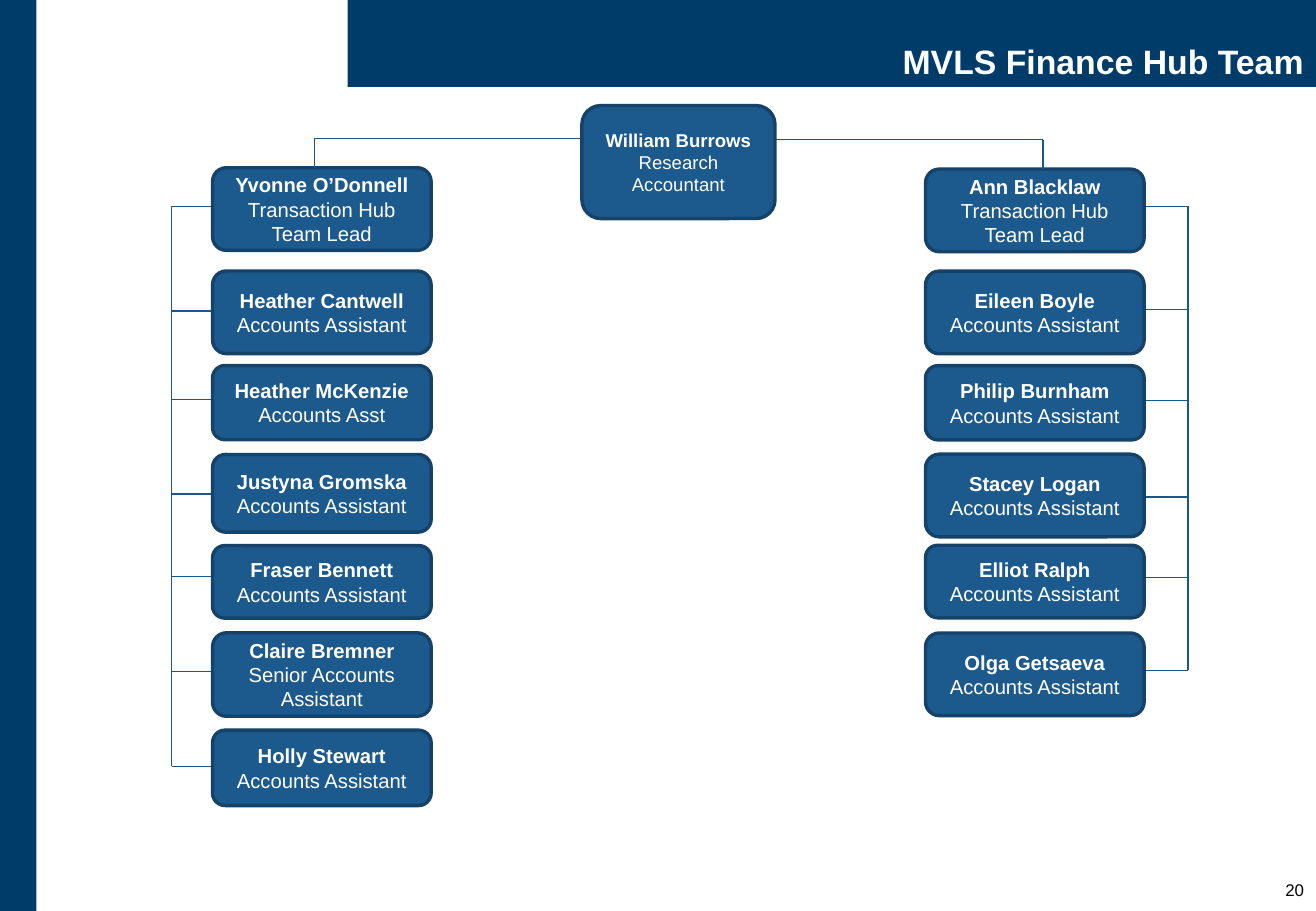
import pptx
import pptx.util
import pptx.dml.color
import pptx.enum.shapes
import pptx.enum.text
import pptx.oxml.ns
import lxml.etree

Pt = pptx.util.Pt
RGBColor = pptx.dml.color.RGBColor
MSO_SHAPE = pptx.enum.shapes.MSO_SHAPE
MSO_ANCHOR = pptx.enum.text.MSO_ANCHOR
PP_ALIGN = pptx.enum.text.PP_ALIGN

NAVY = RGBColor(0x00, 0x3C, 0x69)
BOX_FILL = RGBColor(0x1C, 0x59, 0x8C)
BOX_EDGE = RGBColor(0x15, 0x42, 0x68)
LINK = RGBColor(0x19, 0x57, 0x8C)
WHITE = RGBColor(0xFF, 0xFF, 0xFF)
BLACK = RGBColor(0x00, 0x00, 0x00)

SLIDE_WIDTH, SLIDE_HEIGHT = 780, 540
FONT = "Arial"
LEAD = "Transaction Hub Team Lead"
ASSISTANT = "Accounts Assistant"

# Name, role, top and height of the box, height of its branch line;
# vertical places are counted from the top of the team
LEFT_TEAM = [
    ("Yvonne O’Donnell", LEAD, 0, 49, 23),
    ("Heather Cantwell", ASSISTANT, 61.2, 49, 85),
    ("Heather McKenzie", "Accounts Asst", 117.3, 44, 137.3),
    ("Justyna Gromska", ASSISTANT, 170, 46, 193.4),
    ("Fraser Bennett", ASSISTANT, 224, 43, 242.4),
    ("Claire Bremner", "Senior Accounts Assistant", 275.7, 49.5, 298.7),
    ("Holly Stewart", ASSISTANT, 333.4, 44.7, 354.9),
]
RIGHT_TEAM = [
    ("Ann Blacklaw", LEAD, 0, 49, 22.1),
    ("Eileen Boyle", ASSISTANT, 60.5, 49, 83.3),
    ("Philip Burnham", ASSISTANT, 116.6, 44, 137.2),
    ("Stacey Logan", ASSISTANT, 169, 49, 194.4),
    ("Elliot Ralph", ASSISTANT, 223, 43, 242),
    ("Olga Getsaeva", ASSISTANT, 275, 49, 297.2),
]


def add_box(slide, kind, left, top, width, height, fill, edge=None):
    shape = slide.shapes.add_shape(kind, Pt(left), Pt(top), Pt(width), Pt(height))
    shape.shadow.inherit = False
    shape.fill.solid()
    shape.fill.fore_color.rgb = fill
    if edge is None:
        shape.line.fill.background()
    else:
        shape.line.color.rgb = edge
        shape.line.width = Pt(2)
    return shape


def set_paragraph(paragraph, text, size, color, alignment, bold=False):
    paragraph.text = text
    paragraph.alignment = alignment
    paragraph.font.name = FONT
    paragraph.font.size = Pt(size)
    paragraph.font.bold = bold
    paragraph.font.color.rgb = color


def add_line(slide, start_x, start_y, end_x, end_y):
    connector = slide.shapes.add_connector(
        pptx.enum.shapes.MSO_CONNECTOR.STRAIGHT,
        Pt(start_x), Pt(start_y), Pt(end_x), Pt(end_y))
    connector.line.color.rgb = LINK
    connector.line.width = Pt(0.75)
    properties = connector._element.spPr
    lxml.etree.SubElement(properties, pptx.oxml.ns.qn("a:effectLst"))


def add_person(slide, name, role, left, top, width, height, size=12):
    shape = add_box(slide, MSO_SHAPE.ROUNDED_RECTANGLE,
                    left, top, width, height, BOX_FILL, BOX_EDGE)
    frame = shape.text_frame
    frame.word_wrap = True
    frame.vertical_anchor = MSO_ANCHOR.MIDDLE
    set_paragraph(frame.paragraphs[0], name, size, WHITE, PP_ALIGN.CENTER, bold=True)
    set_paragraph(frame.add_paragraph(), role, size, WHITE, PP_ALIGN.CENTER)


def add_frame(slide, width, height):
    # Side bar
    add_box(slide, MSO_SHAPE.RECTANGLE, 0, 0, 21.6, height, NAVY)

    # Title band
    band_left = 206
    band = add_box(slide, MSO_SHAPE.RECTANGLE, band_left, 0, width - band_left, 51.6, NAVY)
    frame = band.text_frame
    frame.word_wrap = True
    frame.vertical_anchor = MSO_ANCHOR.BOTTOM
    frame.margin_left = Pt(5.8)
    frame.margin_top = frame.margin_bottom = Pt(2.9)
    set_paragraph(frame.paragraphs[0], "MVLS Finance Hub Team", 20, WHITE,
                  PP_ALIGN.RIGHT, bold=True)
    frame.paragraphs[0].line_spacing = 0.9

    # Page number
    number = slide.shapes.add_textbox(Pt(width - 62.6), Pt(height - 22.4), Pt(62.6), Pt(22.4))
    number.text_frame.word_wrap = True
    set_paragraph(number.text_frame.paragraphs[0], "20", 10, BLACK, PP_ALIGN.RIGHT)


def add_team(slide, team, left, top, width, inner_edge, spine_x):
    # Vertical spine outside the boxes, one branch to each person
    branches = [top + row[-1] for row in team]
    add_line(slide, spine_x, branches[0], spine_x, branches[-1])
    for (name, role, offset, height, _), branch_y in zip(team, branches):
        add_line(slide, spine_x, branch_y, inner_edge, branch_y)
        add_person(slide, name, role, left, top + offset, width, height)


def add_head(slide, left, top, width, height, arms):
    # Each arm runs sideways from the head, then down to a team lead
    for lead_x, lead_top, arm_y in arms:
        edge = left if lead_x < left else left + width
        add_line(slide, edge, arm_y, lead_x, arm_y)
        add_line(slide, lead_x, arm_y, lead_x, lead_top)
    add_person(slide, "William Burrows", "Research Accountant",
               left, top, width, height, size=11)


def main():
    presentation = pptx.Presentation()
    presentation.slide_width = Pt(SLIDE_WIDTH)
    presentation.slide_height = Pt(SLIDE_HEIGHT)
    slide = presentation.slides.add_slide(presentation.slide_layouts[6])

    team_width = 129.6
    left_x, left_top = 126, 99.4
    right_x, right_top = 548.6, 100.2

    add_frame(slide, SLIDE_WIDTH, SLIDE_HEIGHT)
    add_team(slide, LEFT_TEAM, left_x, left_top, team_width, left_x, 101.8)
    add_team(slide, RIGHT_TEAM, right_x, right_top, team_width, right_x + team_width, 704.2)
    add_head(slide, 344.9, 62.6, 114.5, 67,
             [(186.5, left_top, 82), (618.2, right_top, 82.8)])

    presentation.save("out.pptx")


if __name__ == "__main__":
    main()
